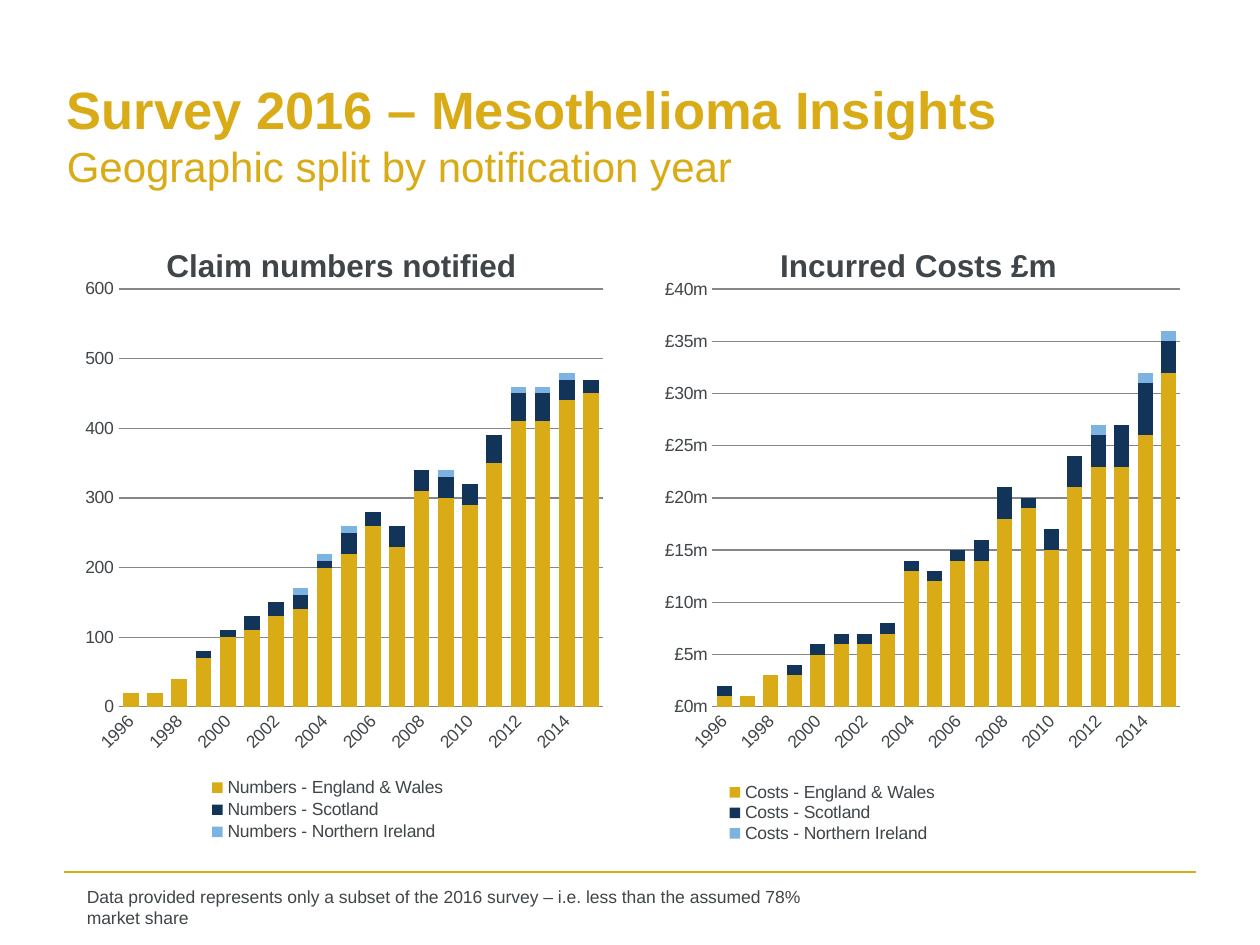
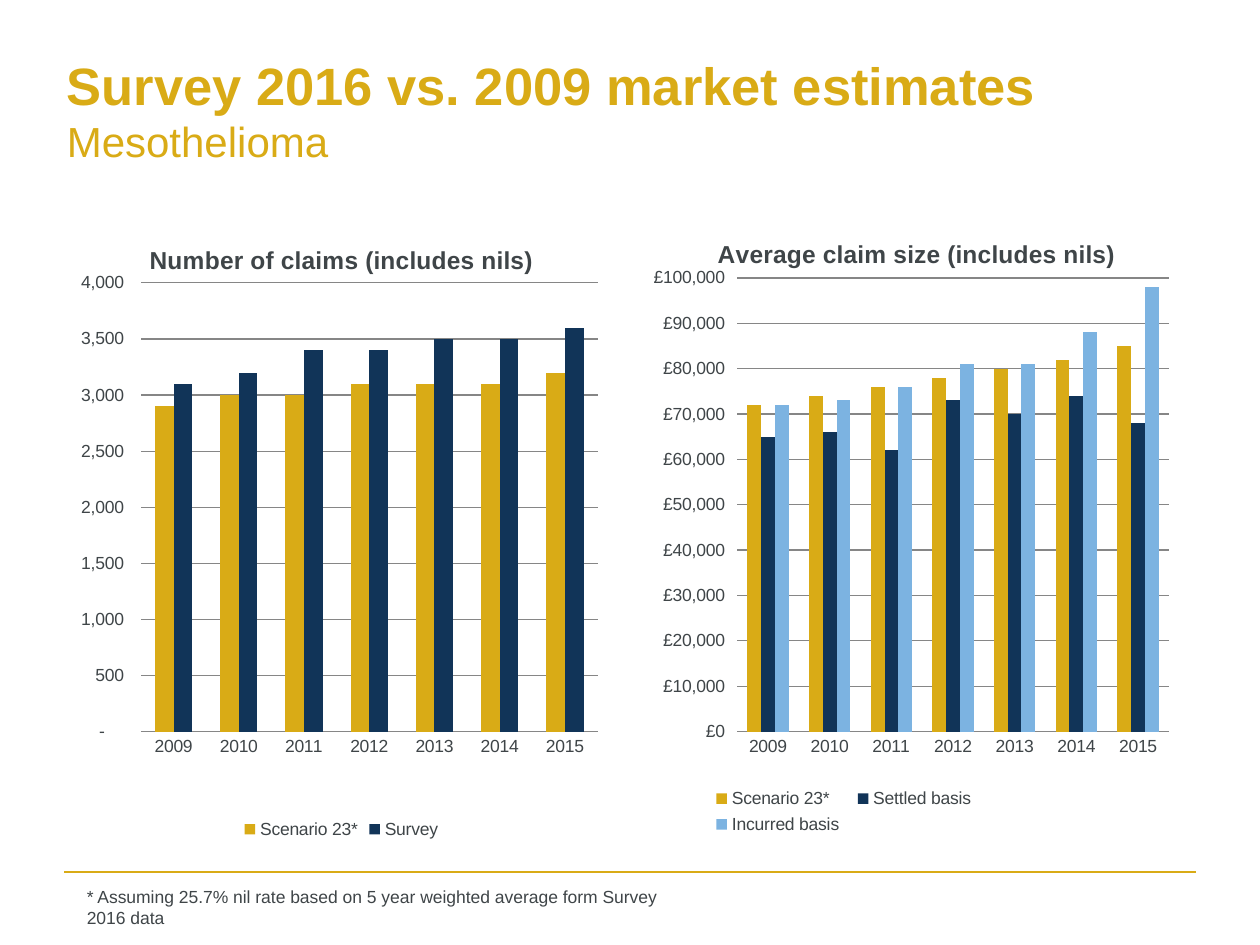
"""Build two survey slides, each with a pair of column charts."""
from lxml import etree
from pptx import Presentation
from pptx.chart.data import CategoryChartData
from pptx.dml.color import RGBColor
from pptx.enum.chart import XL_CHART_TYPE, XL_LEGEND_POSITION, XL_TICK_MARK
from pptx.enum.shapes import MSO_CONNECTOR
from pptx.enum.text import MSO_ANCHOR, MSO_AUTO_SIZE, PP_ALIGN
from pptx.oxml import parse_xml
from pptx.oxml.ns import nsdecls, qn
from pptx.util import Pt

PX = 9144
FONT = "Arial"
COLORS = {"gold": "D9AB16", "navy": "113458", "sky": "7CB3E1", "text": "3F4548", "grid": "868686"}
SERIES_COLORS = [COLORS[name] for name in ("gold", "navy", "sky")]
STACKED, CLUSTERED = XL_CHART_TYPE.COLUMN_STACKED, XL_CHART_TYPE.COLUMN_CLUSTERED


def write(paragraph, text, size=10, color="text", bold=False):
    run = paragraph.add_run()
    run.text = text
    run.font.name, run.font.size, run.font.bold = FONT, Pt(size), bold
    run.font.color.rgb = RGBColor.from_string(COLORS[color])


def set_layout(element, position, box, target=""):
    for layout in element.findall(qn("c:layout")):
        element.remove(layout)
    modes = '<c:xMode val="edge"/><c:yMode val="edge"/>'
    values = "".join(f'<c:{key} val="{value}"/>' for key, value in zip("xywh", box))
    element.insert(position, parse_xml(
        f'<c:layout {nsdecls("c")}><c:manualLayout>{target}{modes}{values}</c:manualLayout></c:layout>'))


survey_years = [str(year) for year in range(1996, 2016)]
recent_years = [str(year) for year in range(2009, 2016)]
regions = ["England & Wales", "Scotland", "Northern Ireland"]
claim_numbers = [
    [20, 20, 40, 70, 100, 110, 130, 140, 200, 220, 260, 230, 310, 300, 290, 350, 410, 410, 440, 450],
    [0, 0, 0, 10, 10, 20, 20, 20, 10, 30, 20, 30, 30, 30, 30, 40, 40, 40, 30, 20],
    [0, 0, 0, 0, 0, 0, 0, 10, 10, 10, 0, 0, 0, 10, 0, 0, 10, 10, 10, 0],
]
incurred_costs = [
    [1, 1, 3, 3, 5, 6, 6, 7, 13, 12, 14, 14, 18, 19, 15, 21, 23, 23, 26, 32],
    [1, 0, 0, 1, 1, 1, 1, 1, 1, 1, 1, 2, 3, 1, 2, 3, 3, 4, 5, 3],
    [0, 0, 0, 0, 0, 0, 0, 0, 0, 0, 0, 0, 0, 0, 0, 0, 1, 0, 1, 1],
]

geographic_charts = [
    {"title": "Claim numbers notified", "box": (50, 175, 442, 495), "maximum": 600, "unit": 100,
     "format": "#,##0", "plot": (0.1, 0.11, 0.87, 0.67), "legend": (0.25, 0.89, 0.45, 0.11),
     "series": {f"Numbers - {region}": values for region, values in zip(regions, claim_numbers)}},
    {"title": "Incurred Costs £m", "box": (508, 175, 442, 495), "maximum": 40, "unit": 5,
     "format": '"£"#,##0"m"', "plot": (0.13, 0.11, 0.84, 0.67), "legend": (0.15, 0.9, 0.39, 0.1),
     "series": {f"Costs - {region}": values for region, values in zip(regions, incurred_costs)}},
]
market_charts = [
    {"title": "Number of claims (includes nils)", "box": (50, 175, 442, 495), "maximum": 4000, "unit": 500,
     "format": '_-* #,##0_-;\\-* #,##0_-;_-* "-"??_-;_-@_', "plot": (0.14, 0.1, 0.82, 0.72), "legend": None,
     "series": {"Scenario 23*": [2900, 3000, 3000, 3100, 3100, 3100, 3200],
                "Survey": [3100, 3200, 3400, 3400, 3500, 3500, 3600]}},
    {"title": "Average claim size (includes nils)", "box": (505, 170, 445, 507), "maximum": 100000,
     "unit": 10000, "format": '"£"#,##0', "plot": (0.18, 0.1, 0.77, 0.71), "legend": (0.12, 0.89, 0.5, 0.09),
     "series": {"Scenario 23*": [72000, 74000, 76000, 78000, 80000, 82000, 85000],
                "Settled basis": [65000, 66000, 62000, 73000, 70000, 74000, 68000],
                "Incurred basis": [72000, 73000, 76000, 81000, 81000, 88000, 98000]}},
]
slides = [
    {"title": "Survey 2016 – Mesothelioma Insights", "subtitle": "Geographic split by notification year",
     "title_bottom": 5, "note_width": 618, "charts": geographic_charts, "type": STACKED,
     "years": survey_years, "title_size": 18, "gap": 55, "overlap": 100, "tick": XL_TICK_MARK.NONE,
     "note": "Data provided represents only a subset of the 2016 survey – i.e. less than the assumed 78% "
             "market share"},
    {"title": "Survey 2016 vs. 2009 market estimates", "subtitle": "Mesothelioma",
     "title_bottom": 44, "note_width": 498, "charts": market_charts, "type": CLUSTERED,
     "years": recent_years, "title_size": 14, "gap": 150, "overlap": 0, "tick": XL_TICK_MARK.OUTSIDE,
     "note": "* Assuming 25.7% nil rate based on 5 year weighted average form Survey 2016 data"},
]

presentation = Presentation()
presentation.slide_width, presentation.slide_height = 1000 * PX, 750 * PX

for content in slides:
    slide = presentation.slides.add_slide(presentation.slide_layouts[5])

    footer_line = slide.shapes.add_connector(MSO_CONNECTOR.STRAIGHT, 51 * PX, 692 * PX, 949 * PX, 692 * PX)
    footer_line.line.color.rgb = RGBColor.from_string(COLORS["gold"])
    footer_line.line.width = Pt(1)
    etree.SubElement(footer_line._element.spPr, qn("a:effectLst"))

    title = slide.shapes.title
    title.left, title.top, title.width, title.height = (value * PX for value in (43, 44, 907, 125))
    frame = title.text_frame
    frame.auto_size = MSO_AUTO_SIZE.NONE
    frame.vertical_anchor = MSO_ANCHOR.MIDDLE
    frame.margin_bottom = content["title_bottom"] * PX
    paragraph = frame.paragraphs[0]
    paragraph.alignment = PP_ALIGN.LEFT
    write(paragraph, content["title"], size=30, color="gold", bold=True)
    paragraph.add_line_break()
    write(paragraph, content["subtitle"], size=24, color="gold")

    note = slide.shapes.add_textbox(59 * PX, 698 * PX, content["note_width"] * PX, 27 * PX)
    note.text_frame.word_wrap = True
    write(note.text_frame.paragraphs[0], content["note"])

    for chart_content in content["charts"]:
        data = CategoryChartData()
        data.categories = content["years"]
        for name, values in chart_content["series"].items():
            data.add_series(name, values)
        box = [value * PX for value in chart_content["box"]]
        chart = slide.shapes.add_chart(content["type"], *box, data).chart
        chart.font.name, chart.font.size = FONT, Pt(10)
        chart.font.color.rgb = RGBColor.from_string(COLORS["text"])
        chart.has_title = True
        write(chart.chart_title.text_frame.paragraphs[0], chart_content["title"],
              size=content["title_size"], bold=True)

        plot = chart.plots[0]
        plot.gap_width, plot.overlap = content["gap"], content["overlap"]
        plot.vary_by_categories = False
        for series, color in zip(plot.series, SERIES_COLORS):
            series.format.fill.solid()
            series.format.fill.fore_color.rgb = RGBColor.from_string(color)

        category_axis, value_axis = chart.category_axis, chart.value_axis
        category_axis.major_tick_mark = XL_TICK_MARK.NONE
        if content["type"] == STACKED:
            category_axis._element.get_or_add_txPr().bodyPr.set("rot", "-2700000")
        value_axis.major_tick_mark = content["tick"]
        value_axis.minimum_scale, value_axis.maximum_scale = 0, chart_content["maximum"]
        value_axis.major_unit = chart_content["unit"]
        value_axis.tick_labels.number_format = chart_content["format"]
        value_axis.tick_labels.number_format_is_linked = False
        value_axis.format.line.fill.background()
        for line in (category_axis.format.line, value_axis.major_gridlines.format.line):
            line.color.rgb = RGBColor.from_string(COLORS["grid"])
            line.width = Pt(0.75)

        chart.has_legend = True
        chart.legend.position = XL_LEGEND_POSITION.BOTTOM
        chart.legend.include_in_layout = False
        if chart_content["legend"]:
            set_layout(chart.legend._element, 1, chart_content["legend"])
        plot_area = chart._chartSpace.chart.plotArea
        set_layout(plot_area, 0, chart_content["plot"], '<c:layoutTarget val="inner"/>')

presentation.save("out.pptx")
